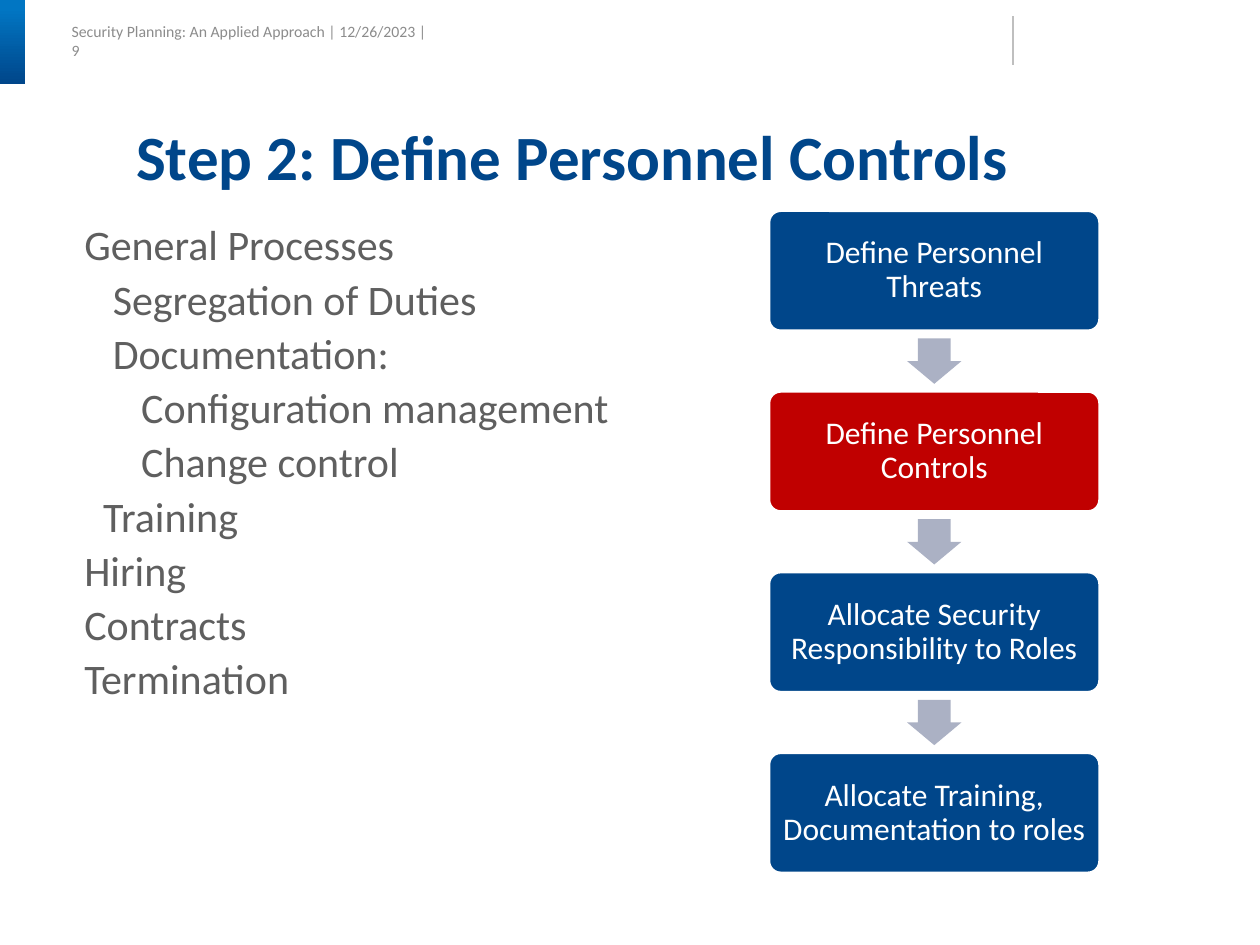
from dataclasses import dataclass

from lxml import etree
from pptx import Presentation, util as u
from pptx.dml.color import RGBColor
from pptx.enum import shapes, text
from pptx.oxml.ns import qn

COLORS = {"navy": "00468A", "sky": "0176C3", "red": "C00000", "arrow": "ABB1C4",
          "white": "FFFFFF", "body": "5F5F5F", "header": "8C8C8C", "rule": "BFBFBF"}
FONT = "Calibri"
STEP_LEFT, STEP_TOP, STEP_WIDTH, STEP_HEIGHT, STEP_PITCH = 439.2, 120.2, 189.4, 69.1, 103.25
ARROW_WIDTH, ARROW_HEIGHT = 31, 25.9


@dataclass
class Step:
    label: str
    color: str = "navy"


@dataclass
class Topic:
    label: str
    indent: float = 0


STEPS = [
    Step("Define Personnel Threats"),
    Step("Define Personnel Controls", "red"),
    Step("Allocate Security Responsibility to Roles"),
    Step("Allocate Training, Documentation to roles"),
]
TOPICS = [
    Topic("General Processes"),
    Topic("Segregation of Duties", 16.3),
    Topic("Documentation:", 16.3),
    Topic("Configuration management", 32.5),
    Topic("Change control", 32.5),
    Topic("Training", 10.8),
    Topic("Hiring"),
    Topic("Contracts"),
    Topic("Termination"),
]


def rgb(name: str) -> RGBColor:
    return RGBColor.from_string(COLORS[name])


def set_insets(frame, inset: float) -> None:
    frame.margin_left = frame.margin_right = u.Pt(inset)
    frame.margin_top = frame.margin_bottom = u.Pt(inset)


def style(para, size: float, color: str, bold: bool = False) -> None:
    font = para.font
    font.name, font.size, font.bold = FONT, u.Pt(size), bold
    font.color.rgb = rgb(color)


def add_text_box(page, left: float, top: float, width: float, height: float, wrap: bool = True):
    frame = page.shapes.add_textbox(u.Pt(left), u.Pt(top), u.Pt(width), u.Pt(height)).text_frame
    set_insets(frame, 0)
    frame.word_wrap = wrap
    return frame


def add_preset(page, preset, left: float, top: float, width: float, height: float):
    shape = page.shapes.add_shape(preset, u.Pt(left), u.Pt(top), u.Pt(width), u.Pt(height))
    shape.shadow.inherit = False
    shape.line.fill.background()
    return shape


def add_header(page) -> None:
    band = add_preset(page, shapes.MSO_SHAPE.RECTANGLE, 0, 0, 14.4, 48.2)
    band.fill.gradient()
    band.fill.gradient_angle = 270
    for stop, position, color in zip(band.fill.gradient_stops, (0.1, 1), ("sky", "navy")):
        stop.position, stop.color.rgb = position, rgb(color)
    rule = page.shapes.add_connector(
        shapes.MSO_CONNECTOR.STRAIGHT, u.Pt(578.9), u.Pt(9.4), u.Pt(578.9), u.Pt(37.4))
    rule.line.color.rgb, rule.line.width = rgb("rule"), u.Pt(0.75)
    etree.SubElement(rule._element.spPr, qn("a:effectLst"))
    frame = add_text_box(page, 41, 16.6, 204.5, 16.6, wrap=False)
    frame.margin_bottom = u.Pt(2.9)
    frame.vertical_anchor = text.MSO_ANCHOR.MIDDLE
    para = frame.paragraphs[0]
    para.text = "Security Planning: An Applied Approach | 12/26/2023 | 9"
    style(para, 9, "header")


def add_title(page) -> None:
    para = add_text_box(page, 77.8, 72, 642.2, 39.6).paragraphs[0]
    para.text = "Step 2: Define Personnel Controls"
    para.line_spacing = 0.9
    style(para, 36, "navy", bold=True)


def add_topics(page, topics: list[Topic]) -> None:
    frame = add_text_box(page, 48.2, 131.8, 311.8, 378.7)
    for index, topic in enumerate(topics):
        para = frame.add_paragraph() if index else frame.paragraphs[0]
        para.text = topic.label
        para.line_spacing = u.Pt(22)
        para.space_before = u.Pt(9 if index else 0)
        para._p.get_or_add_pPr().set("marL", str(u.Pt(topic.indent)))
        style(para, 24, "body")


def add_step(page, step: Step, top: float) -> None:
    box = add_preset(page, shapes.MSO_SHAPE.ROUNDED_RECTANGLE,
                     STEP_LEFT, top, STEP_WIDTH, STEP_HEIGHT)
    box.adjustments[0] = 0.1
    box.fill.solid()
    box.fill.fore_color.rgb = rgb(step.color)
    box.line.color.rgb, box.line.width = rgb("white"), u.Pt(2)
    frame = box.text_frame
    set_insets(frame, 4.8)
    frame.word_wrap = True
    frame.vertical_anchor = text.MSO_ANCHOR.MIDDLE
    para = frame.paragraphs[0]
    para.text = step.label
    para.alignment = text.PP_ALIGN.CENTER
    para.line_spacing = 0.9
    style(para, 18, "white")


def add_arrow(page, middle: float) -> None:
    arrow = add_preset(page, shapes.MSO_SHAPE.DOWN_ARROW,
                       STEP_LEFT + (STEP_WIDTH - ARROW_WIDTH) / 2, middle - ARROW_HEIGHT / 2,
                       ARROW_WIDTH, ARROW_HEIGHT)
    arrow.adjustments[0], arrow.adjustments[1] = 0.6, 0.5
    arrow.fill.solid()
    arrow.fill.fore_color.rgb = rgb("arrow")


def main() -> None:
    """Build the personnel controls slide."""
    deck = Presentation()
    deck.slide_width, deck.slide_height = u.Pt(720), u.Pt(540)
    page = deck.slides.add_slide(deck.slide_layouts[6])
    add_header(page)
    for index, step in enumerate(STEPS):
        top = STEP_TOP + index * STEP_PITCH
        if index:
            add_arrow(page, top - (STEP_PITCH - STEP_HEIGHT) / 2)
        add_step(page, step, top)
    add_topics(page, TOPICS)
    add_title(page)
    deck.save("out.pptx")


if __name__ == "__main__":
    main()
